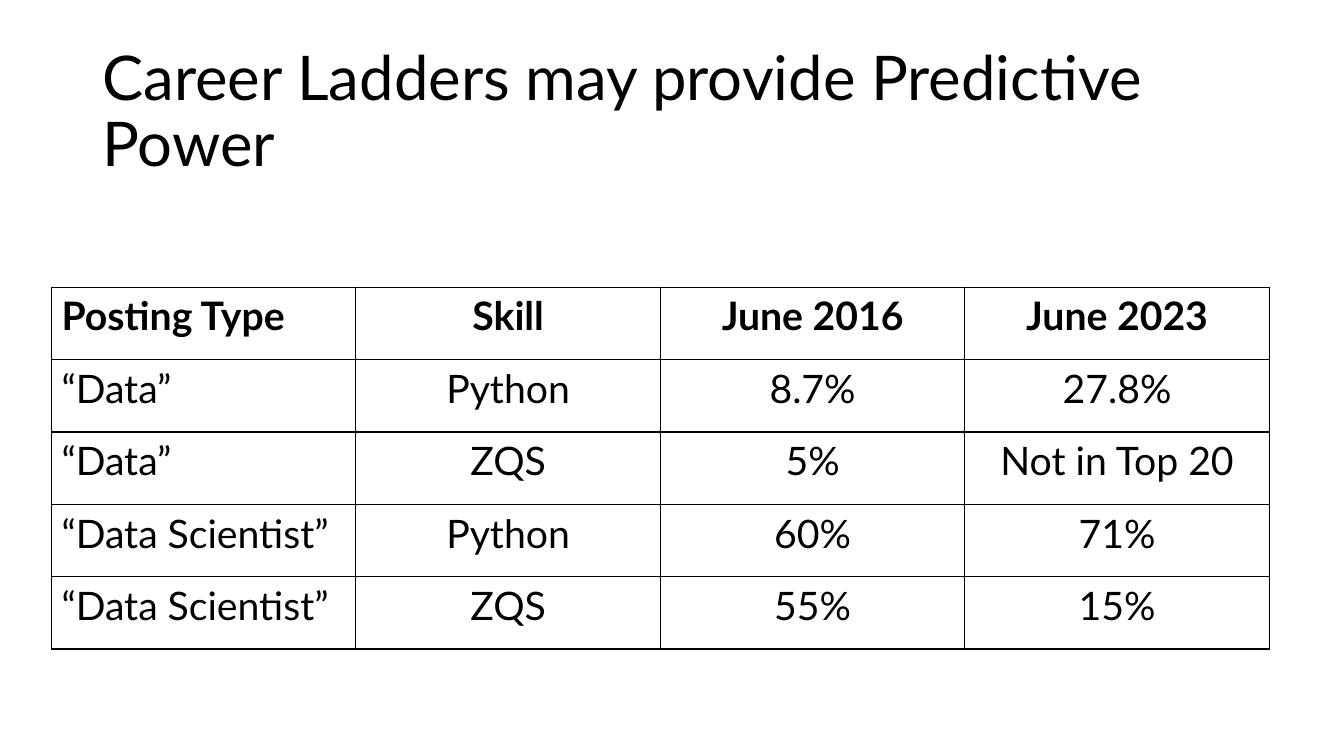
from lxml import etree
from pptx import Presentation
from pptx import util as u
from pptx.dml.color import RGBColor
from pptx.enum import text
from pptx.oxml.ns import qn

Pt = u.Pt


def color(hex_string):
    return RGBColor.from_string(hex_string)


class SlideBuilder:
    """Holds the style and the current slide."""

    FONT = "Lato"
    INK = "000000"
    TITLE_SIZE = 44
    TABLE_SIZE = 28
    BORDER_WIDTH = 1

    def __init__(self, presentation):
        self.slide = presentation.slides.add_slide(presentation.slide_layouts[5])

    def style(self, paragraph, size, align, bold=False):
        paragraph.alignment = align
        font = paragraph.font
        font.name, font.size, font.bold = self.FONT, Pt(size), bold
        font.color.rgb = color(self.INK)

    def title(self, words, left, top, width, height):
        shape = self.slide.shapes.title
        shape.left, shape.top = Pt(left), Pt(top)
        shape.width, shape.height = Pt(width), Pt(height)
        frame = shape.text_frame
        frame.text = words
        frame.word_wrap = True
        frame.auto_size = text.MSO_AUTO_SIZE.NONE
        frame.vertical_anchor = text.MSO_ANCHOR.MIDDLE
        paragraph = frame.paragraphs[0]
        paragraph.line_spacing = 0.9
        self.style(paragraph, self.TITLE_SIZE, text.PP_ALIGN.LEFT)

    def border(self, cell):
        properties = cell._tc.get_or_add_tcPr()
        for position, side in enumerate(("lnL", "lnR", "lnT", "lnB")):
            line = etree.Element(qn(f"a:{side}"), w=str(Pt(self.BORDER_WIDTH)))
            fill = etree.SubElement(line, qn("a:solidFill"))
            etree.SubElement(fill, qn("a:srgbClr"), val=self.INK)
            properties.insert(position, line)

    def table(self, rows, left, top, column_width, row_height):
        columns = len(rows[0])
        table = self.slide.shapes.add_table(
            len(rows), columns, Pt(left), Pt(top),
            Pt(column_width * columns), Pt(row_height * len(rows))).table
        table.horz_banding = False
        for column in table.columns:
            column.width = Pt(column_width)
        for row_index, row in enumerate(rows):
            table.rows[row_index].height = Pt(row_height)
            for column_index, words in enumerate(row):
                cell = table.cell(row_index, column_index)
                cell.text = words
                cell.fill.background()
                self.border(cell)
                align = text.PP_ALIGN.CENTER if column_index else text.PP_ALIGN.LEFT
                self.style(cell.text_frame.paragraphs[0], self.TABLE_SIZE,
                           align, bold=row_index == 0)


def main():
    presentation = Presentation()
    presentation.slide_width, presentation.slide_height = Pt(960), Pt(540)
    builder = SlideBuilder(presentation)

    # Title
    builder.title("Career Ladders may provide Predictive Power", 66, 28.75, 828, 104.4)

    # Skill shares by posting type
    builder.table([
        ("Posting Type", "Skill", "June 2016", "June 2023"),
        ("“Data”", "Python", "8.7%", "27.8%"),
        ("“Data”", "ZQS", "5%", "Not in Top 20"),
        ("“Data Scientist”", "Python", "60%", "71%"),
        ("“Data Scientist”", "ZQS", "55%", "15%"),
    ], left=36.75, top=205.2, column_width=217.5, row_height=51.7)

    presentation.save("out.pptx")


if __name__ == "__main__":
    main()
